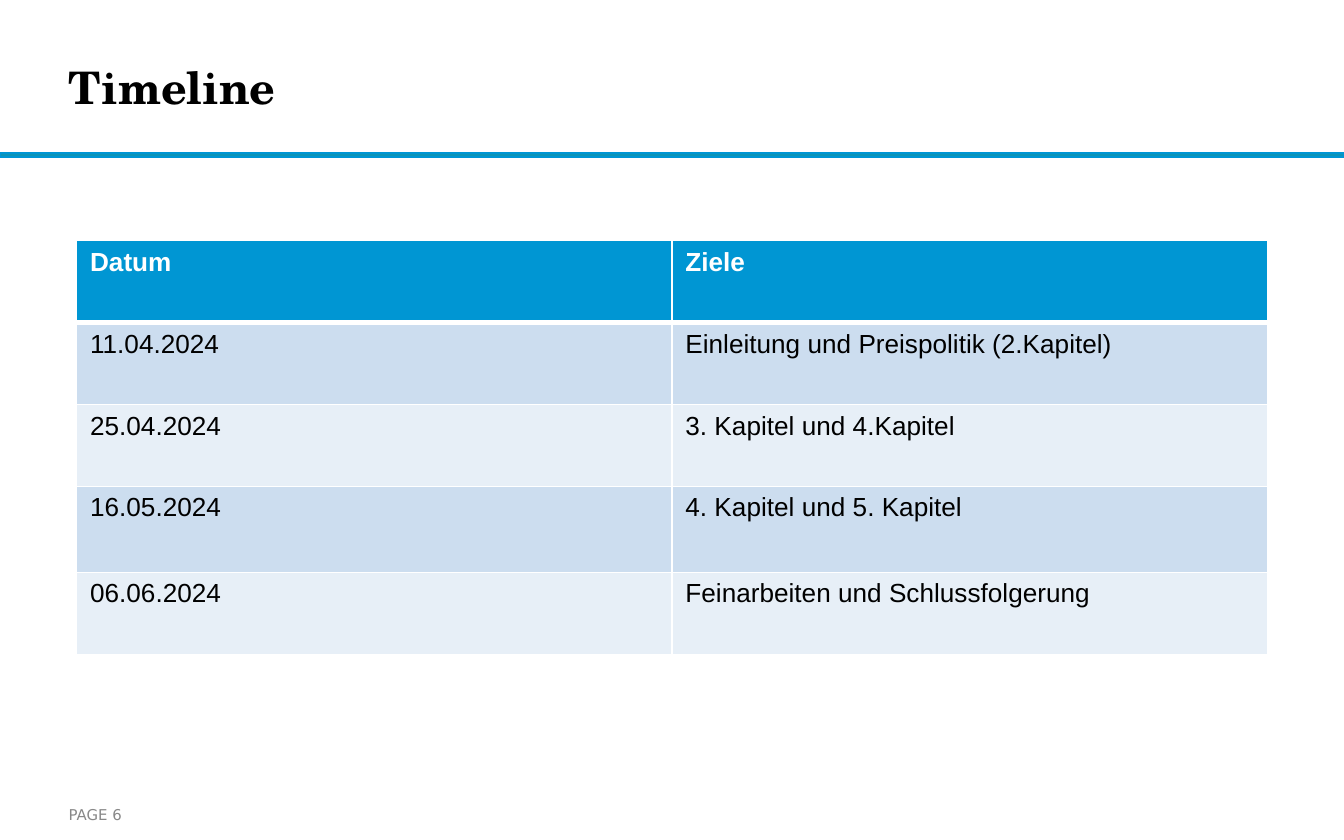
from dataclasses import dataclass
from typing import Any

from lxml.etree import SubElement
from pptx import Presentation
from pptx.dml.color import RGBColor
from pptx.enum.shapes import MSO_SHAPE as Shape
from pptx.enum.text import MSO_ANCHOR as Anchor
from pptx.oxml.ns import qn
from pptx.util import Inches, Pt


@dataclass(frozen=True)
class Theme:
    accent: str = "0096D3"
    rule: str = "0C94B7"
    white: str = "FFFFFF"
    black: str = "000000"
    gray: str = "888888"
    bands: tuple[str, str] = ("CCDDEF", "E7EFF7")
    heading_font: str = "TeX Gyre Schola"
    table_font: str = "Arial"
    footer_font: str = "DejaVu Sans"
    heading_size: int = 24
    table_size: int = 14
    footer_size: int = 8


@dataclass(frozen=True)
class Label:
    text: str
    box: tuple[float, float, float, float]
    vertical_margin: float
    font: dict[str, Any]
    color: str


@dataclass(frozen=True)
class Milestone:
    date: str
    goal: str


THEME = Theme()
LABELS = (
    Label("PAGE 6", (0.51, 5.92, 0.98, 0.28), 0.05,
          {"name": THEME.footer_font, "size": Pt(THEME.footer_size)}, THEME.gray),
    Label("Timeline", (0.51, 0.15, 7.48, 0.99), 0,
          {"name": THEME.heading_font, "size": Pt(THEME.heading_size), "bold": True},
          THEME.black),
)
HEADER = Milestone("Datum", "Ziele")
MILESTONES = (
    Milestone("11.04.2024", "Einleitung und Preispolitik (2.Kapitel)"),
    Milestone("25.04.2024", "3. Kapitel und 4.Kapitel"),
    Milestone("16.05.2024", "4. Kapitel und 5. Kapitel"),
    Milestone("06.06.2024", "Feinarbeiten und Schlussfolgerung"),
)
ROW_HEIGHTS = (0.61, 0.61, 0.61, 0.64, 0.61)
COLUMN_WIDTH = 4.43


def apply_format(target: Any, values: dict[str, Any]) -> None:
    for name, value in values.items():
        setattr(target, name, value)


def write_text(paragraph: Any, text: str, font: dict[str, Any], color: str) -> None:
    run = paragraph.add_run()
    run.text = text
    apply_format(run.font, font)
    run.font.color.rgb = RGBColor.from_string(color)


def draw_rule(slide: Any) -> None:
    rule = slide.shapes.add_shape(
        Shape.RECTANGLE, Inches(0), Inches(1.14), Inches(10), Inches(0.03))
    rule.shadow.inherit = False
    rule.fill.solid()
    rule.fill.fore_color.rgb = RGBColor.from_string(THEME.rule)
    rule.line.color.rgb = RGBColor.from_string(THEME.accent)
    rule.line.width = Pt(1)


def draw_label(slide: Any, label: Label) -> None:
    frame = slide.shapes.add_textbox(*map(Inches, label.box)).text_frame
    margin = Inches(label.vertical_margin)
    apply_format(frame, {
        "word_wrap": True, "vertical_anchor": Anchor.MIDDLE,
        "margin_left": 0, "margin_right": 0,
        "margin_top": margin, "margin_bottom": margin,
    })
    write_text(frame.paragraphs[0], label.text, label.font, label.color)


def draw_borders(cell: Any, widths: dict[str, int]) -> None:
    properties = cell._tc.get_or_add_tcPr()
    for side, width in widths.items():
        line = SubElement(properties, qn(f"a:ln{side}"), w=str(Pt(width)))
        fill = SubElement(line, qn("a:solidFill"))
        SubElement(fill, qn("a:srgbClr"), val=THEME.white)


def draw_table(slide: Any) -> None:
    entries = (HEADER, *MILESTONES)
    table = slide.shapes.add_table(
        len(entries), 2, Inches(0.57), Inches(1.79),
        Inches(2 * COLUMN_WIDTH), Inches(sum(ROW_HEIGHTS))).table
    apply_format(table, {"first_row": False, "horz_banding": False})
    for column in table.columns:
        column.width = Inches(COLUMN_WIDTH)
    for index, (entry, height) in enumerate(zip(entries, ROW_HEIGHTS)):
        is_header = index == 0
        fill = THEME.accent if is_header else THEME.bands[(index - 1) % 2]
        color = THEME.white if is_header else THEME.black
        font = {"name": THEME.table_font, "size": Pt(THEME.table_size), "bold": is_header}
        borders = {"L": 1, "R": 1, "T": 3 if index == 1 else 1, "B": 3 if is_header else 1}
        table.rows[index].height = Inches(height)
        for cell, text in zip(table.rows[index].cells, (entry.date, entry.goal)):
            draw_borders(cell, borders)
            cell.fill.solid()
            cell.fill.fore_color.rgb = RGBColor.from_string(fill)
            write_text(cell.text_frame.paragraphs[0], text, font, color)


def main() -> None:
    presentation = Presentation()
    apply_format(presentation, {"slide_width": Inches(10), "slide_height": Inches(6.25)})
    slide = presentation.slides.add_slide(presentation.slide_layouts[6])
    draw_rule(slide)
    for label in LABELS:
        draw_label(slide, label)
    draw_table(slide)
    presentation.save("out.pptx")


if __name__ == "__main__":
    main()
